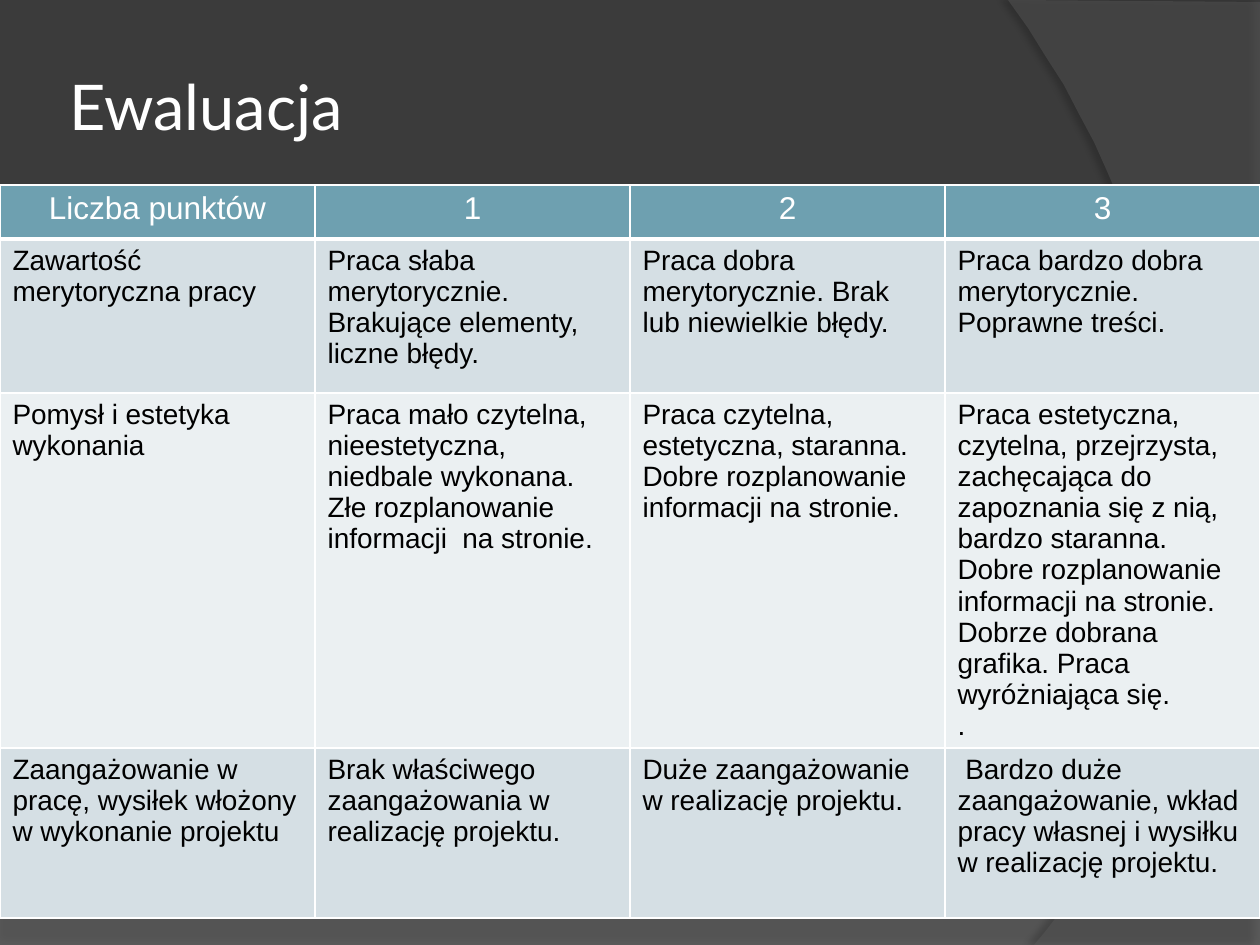
import pptx
import pptx.dml.color
import pptx.enum.text
import pptx.oxml
import pptx.oxml.ns
import pptx.util
from lxml import etree

EMU_PER_PX = 914400 / 126
RGBColor = pptx.dml.color.RGBColor
ALIGN = pptx.enum.text.PP_ALIGN
ANCHOR = pptx.enum.text.MSO_ANCHOR
qn = pptx.oxml.ns.qn

BACKGROUND = RGBColor(0x3B, 0x3B, 0x3B)
WAVE = RGBColor(0x7F, 0x7F, 0x7F)
ARC = RGBColor(0x5E, 0x5E, 0x5E)
WHITE = RGBColor(0xFF, 0xFF, 0xFF)
BLACK = RGBColor(0x00, 0x00, 0x00)
HEADER = RGBColor(0x6E, 0xA0, 0xB0)
BANDS = [RGBColor(0xD5, 0xDF, 0xE4), RGBColor(0xEB, 0xF0, 0xF2)]

TITLE_FONT = {"name": "Lato", "size": pptx.util.Pt(36), "bold": False}
HEADER_FONT = {"name": "Arial", "size": pptx.util.Pt(18), "bold": False}
BODY_FONT = {"name": "Arial", "size": pptx.util.Pt(16), "bold": False}

COLUMN_WIDTH = 315
ROW_HEIGHTS = [54, 154, 355, 170]
ROWS = [
    ["Liczba punktów", "1", "2", "3"],
    ["Zawartość merytoryczna pracy",
     "Praca słaba merytorycznie. Brakujące elementy, liczne błędy.",
     "Praca dobra merytorycznie. Brak lub niewielkie błędy.",
     "Praca bardzo dobra merytorycznie. Poprawne treści."],
    ["Pomysł i estetyka wykonania",
     "Praca mało czytelna, nieestetyczna, niedbale wykonana.\n"
     "Złe rozplanowanie informacji  na stronie.",
     "Praca czytelna, estetyczna, staranna.\n"
     "Dobre rozplanowanie informacji na stronie.",
     "Praca estetyczna, czytelna, przejrzysta, zachęcająca do zapoznania "
     "się z nią, bardzo staranna.\n"
     "Dobre rozplanowanie informacji na stronie. Dobrze dobrana grafika. "
     "Praca wyróżniająca się.\n."],
    ["Zaangażowanie w pracę, wysiłek włożony w wykonanie projektu",
     "Brak właściwego  zaangażowania w realizację projektu.",
     "Duże zaangażowanie w realizację projektu.",
     " Bardzo duże zaangażowanie, wkład pracy własnej i wysiłku "
     "w realizację projektu."],
]


def px(length):
    return pptx.util.Emu(round(length * EMU_PER_PX))


def set_format(target, values):
    for name, value in values.items():
        setattr(target, name, value)


def format_paragraphs(text_frame, font, color, alignment):
    for paragraph in text_frame.paragraphs:
        paragraph.alignment = alignment
        for run in paragraph.runs:
            set_format(run.font, font)
            run.font.color.rgb = color


def curve_points(start, control_1, control_2, end, steps=40):
    """Return points along a cubic Bézier curve."""
    points = []
    for step in range(steps + 1):
        t = step / steps
        weights = ((1 - t) ** 3, 3 * t * (1 - t) ** 2, 3 * t * t * (1 - t), t ** 3)
        corners = (start, control_1, control_2, end)
        points.append(tuple(sum(weight * corner[axis] for weight, corner in zip(weights, corners))
                            for axis in (0, 1)))
    return points


def add_shadow(shape, opacity, blur, distance, direction):
    effects = etree.SubElement(shape.element.spPr, qn("a:effectLst"))
    shadow = etree.SubElement(effects, qn("a:outerShdw"), {
        "blurRad": str(pptx.util.Pt(blur)), "dist": str(pptx.util.Pt(distance)),
        "dir": str(direction * 60000), "algn": "ctr", "rotWithShape": "0"})
    color = etree.SubElement(shadow, qn("a:srgbClr"), val=str(BLACK))
    etree.SubElement(color, qn("a:alpha"), val=str(opacity * 1000))


def add_backdrop(slide, points, color, opacity, shadow):
    """Add a translucent outline that casts a soft shadow."""
    builder = slide.shapes.build_freeform(*points[0], scale=EMU_PER_PX)
    builder.add_line_segments(points[1:], close=True)
    shape = builder.convert_to_shape()
    shape.fill.solid()
    shape.fill.fore_color.rgb = color
    color_element = shape.element.spPr.find(qn("a:solidFill"))[0]
    etree.SubElement(color_element, qn("a:alpha"), val=str(opacity * 1000))
    shape.line.fill.background()
    add_shadow(shape, *shadow)


def place_title(slide, text):
    title = slide.shapes.title
    title.element.getparent().append(title.element)  # in front of the backdrop
    set_format(title, {"left": px(63), "top": px(16), "width": px(1134), "height": px(179)})
    frame = title.text_frame
    frame.text = text
    set_format(frame, {"vertical_anchor": ANCHOR.MIDDLE, "word_wrap": True,
                       "margin_left": px(6), "margin_right": px(6),
                       "margin_top": px(6), "margin_bottom": px(6)})
    format_paragraphs(frame, TITLE_FONT, WHITE, ALIGN.LEFT)


def set_borders(cell, bottom_width):
    properties = cell._tc.get_or_add_tcPr()
    for side, width in (("L", 1), ("R", 1), ("T", 1), ("B", bottom_width)):
        line = etree.SubElement(properties, qn("a:ln" + side), w=str(pptx.util.Pt(width)))
        fill = etree.SubElement(line, qn("a:solidFill"))
        etree.SubElement(fill, qn("a:srgbClr"), val=str(WHITE))


def add_criteria_table(slide):
    columns = len(ROWS[0])
    table = slide.shapes.add_table(len(ROWS), columns, px(0), px(185),
                                   px(COLUMN_WIDTH * columns), px(sum(ROW_HEIGHTS))).table
    for column in table.columns:
        column.width = px(COLUMN_WIDTH)
    for row_index, (texts, height) in enumerate(zip(ROWS, ROW_HEIGHTS)):
        table.rows[row_index].height = px(height)
        is_header = row_index == 0
        for column_index, text in enumerate(texts):
            cell = table.cell(row_index, column_index)
            cell.text = text
            set_borders(cell, 3 if is_header else 1)
            cell.fill.solid()
            cell.fill.fore_color.rgb = HEADER if is_header else BANDS[(row_index - 1) % 2]
            if is_header:
                format_paragraphs(cell.text_frame, HEADER_FONT, WHITE, ALIGN.CENTER)
            else:
                format_paragraphs(cell.text_frame, BODY_FONT, BLACK, ALIGN.LEFT)


def main():
    presentation = pptx.Presentation()
    set_format(presentation, {"slide_width": px(1260), "slide_height": px(945)})
    slide = presentation.slides.add_slide(presentation.slide_layouts[5])
    slide.background.fill.solid()
    slide.background.fill.fore_color.rgb = BACKGROUND

    wave = curve_points((1260, 655), (704, 919), (493, 906), (0, 888))
    add_backdrop(slide, [(0, 946), (1260, 946)] + wave, WAVE, 45, (35, 4, 3.5, 270))
    arc = curve_points((1034, 945), (1178, 780), (1283, 378), (1008, 0))
    add_backdrop(slide, [(1260, 2), (1260, 945)] + arc, ARC, 40, (45, 4, 4, 180))

    place_title(slide, "Ewaluacja")
    add_criteria_table(slide)
    presentation.save("out.pptx")


if __name__ == "__main__":
    main()
